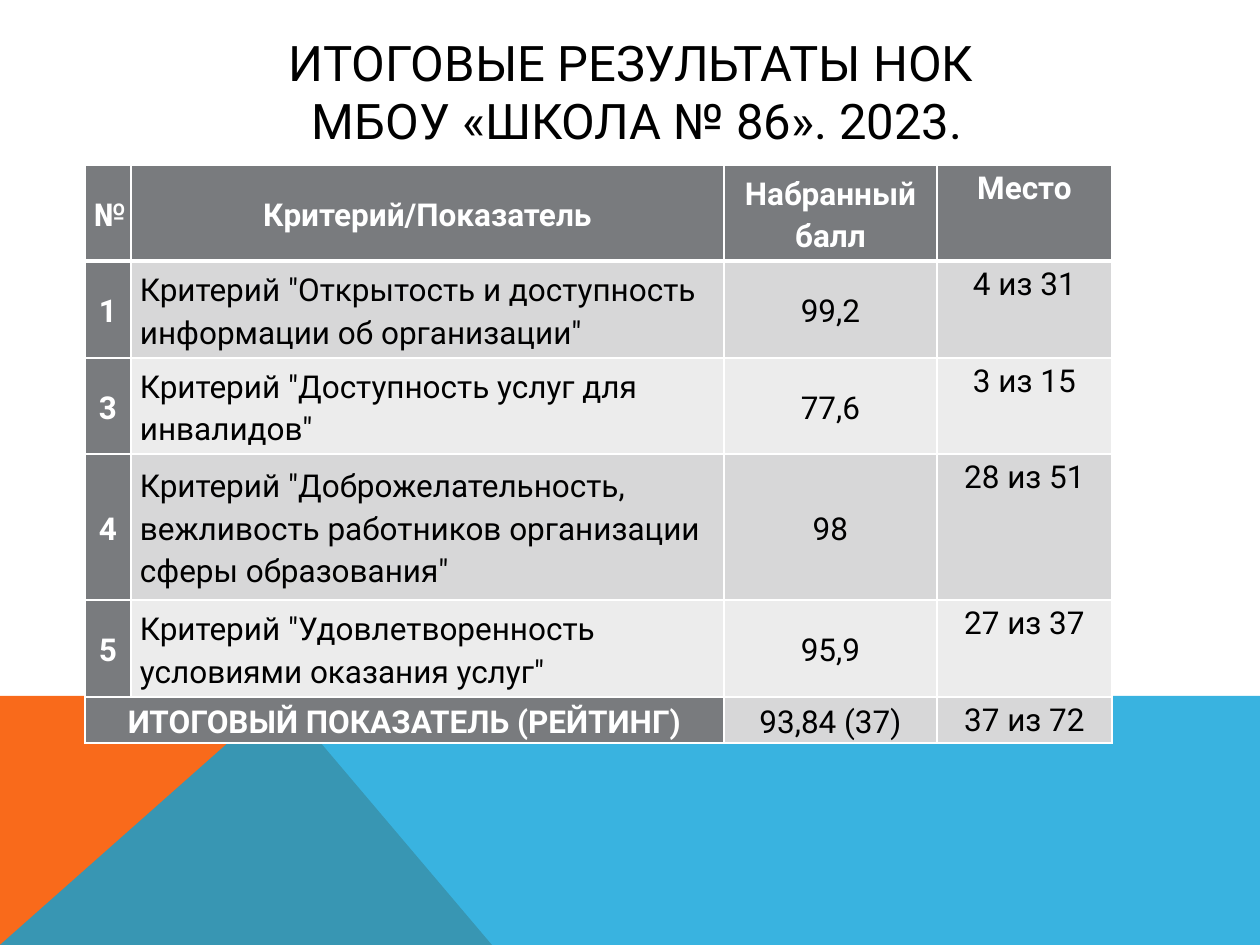
from dataclasses import dataclass

from lxml import etree
from pptx import Presentation
from pptx import util as u
from pptx.dml.color import RGBColor
from pptx.enum import text
from pptx.oxml import ns

SCALE = u.Inches(1) / 126


@dataclass(frozen=True)
class Theme:
    font: str = "Roboto"
    title_size: int = 28
    table_size: int = 18
    ink: str = "000000"
    white: str = "FFFFFF"
    head: str = "797B7E"
    bands: tuple = ("D7D7D8", "ECECEC")
    orange: str = "F96A1B"
    blue: str = "08A1D9"


THEME = Theme()
CENTER = text.PP_ALIGN.CENTER
LEFT = text.PP_ALIGN.LEFT
MIDDLE = text.MSO_ANCHOR.MIDDLE
TOP = text.MSO_ANCHOR.TOP

COLUMNS = (46, 593, 213, 175)
ROWS = (96, 97, 96, 146, 97, 46)
RESULTS = (
    ("№", "Критерий/Показатель", "Набранный балл", "Место"),
    ("1", 'Критерий "Открытость и доступность информации об организации"', "99,2", "4 из 31"),
    ("3", 'Критерий "Доступность услуг для инвалидов"', "77,6", "3 из 15"),
    ("4", 'Критерий "Доброжелательность, вежливость работников организации сферы образования"',
     "98", "28 из 51"),
    ("5", 'Критерий "Удовлетворенность условиями оказания услуг"', "95,9", "27 из 37"),
    ("ИТОГОВЫЙ ПОКАЗАТЕЛЬ (РЕЙТИНГ)", "", "93,84 (37)", "37 из 72"),
)


def px(value):
    return u.Emu(round(value * SCALE))


def style_para(para, size, color, bold=False, align=CENTER):
    para.alignment = align
    para.font.name = THEME.font
    para.font.size = u.Pt(size)
    para.font.bold = bold
    para.font.color.rgb = RGBColor.from_string(color)


def add_area(page, points, color, alpha=100):
    builder = page.shapes.build_freeform(*points[0], scale=SCALE)
    builder.add_line_segments(points[1:], close=True)
    area = builder.convert_to_shape()
    area.shadow.inherit = False
    area.line.fill.background()
    area.fill.solid()
    area.fill.fore_color.rgb = RGBColor.from_string(color)
    if alpha < 100:
        tint = area.fill._xPr.find(f".//{ns.qn('a:srgbClr')}")
        etree.SubElement(tint, ns.qn("a:alpha"), val=str(alpha * 1000))


def add_backdrop(page, left, top, width, height):
    right, bottom = left + width, top + height
    peak = left + 281
    add_area(page, [(left, bottom), (left, top), (peak, top), (left + 492, bottom)], THEME.orange)
    add_area(page, [(left, bottom), (peak, top), (right, top), (right, bottom)], THEME.blue, 80)


def add_title(page, left, top, width, height):
    box = page.shapes.add_textbox(px(left), px(top), px(width), px(height))
    frame = box.text_frame
    frame.word_wrap = True
    frame.vertical_anchor = MIDDLE
    frame.text = "ИТОГОВЫЕ РЕЗУЛЬТАТЫ НОК\v МБОУ «ШКОЛА № 86». 2023."
    style_para(frame.paragraphs[0], THEME.title_size, THEME.ink)


def set_borders(cell, **widths):
    props = cell._tc.get_or_add_tcPr()
    for side in "LRTB":
        line = etree.SubElement(props, ns.qn(f"a:ln{side}"), w=str(u.Pt(widths.get(side, 1))))
        fill = etree.SubElement(line, ns.qn("a:solidFill"))
        etree.SubElement(fill, ns.qn("a:srgbClr"), val=THEME.white)


def fill_cell(cell, words, row, column):
    is_head = row == 0 or column == 0 or (row == len(ROWS) - 1 and column == 1)
    set_borders(cell, T=3 if row == 1 else 1, B=3 if row == 0 else 1)
    cell.fill.solid()
    color = THEME.head if is_head else THEME.bands[(row - 1) % 2]
    cell.fill.fore_color.rgb = RGBColor.from_string(color)
    cell.margin_left = cell.margin_right = px(9)
    cell.margin_top = cell.margin_bottom = 0
    cell.vertical_anchor = TOP if column == 3 else MIDDLE
    cell.text = words
    para = cell.text_frame.paragraphs[0]
    para.line_spacing = 1.15
    style_para(para, THEME.table_size, THEME.white if is_head else THEME.ink, is_head,
               LEFT if column == 1 and not is_head else CENTER)


def add_results(page, left, top):
    frame = page.shapes.add_table(len(ROWS), len(COLUMNS), px(left), px(top),
                                  px(sum(COLUMNS)), px(sum(ROWS)))
    table = frame.table
    table.first_row = table.horz_banding = False
    for column, width in zip(table.columns, COLUMNS):
        column.width = px(width)
    for row, height in zip(table.rows, ROWS):
        row.height = px(height)
    for row, record in enumerate(RESULTS):
        for column, words in enumerate(record):
            fill_cell(table.cell(row, column), words, row, column)
    last = len(ROWS) - 1
    table.cell(last, 0).merge(table.cell(last, 1))


def main():
    deck = Presentation()
    deck.slide_width, deck.slide_height = px(1260), px(945)
    page = deck.slides.add_slide(deck.slide_layouts[6])
    add_backdrop(page, 0, 696, 1260, 249)
    add_title(page, 113, 53, 1036, 76)
    add_results(page, 85, 165)
    deck.save("out.pptx")


if __name__ == "__main__":
    main()
